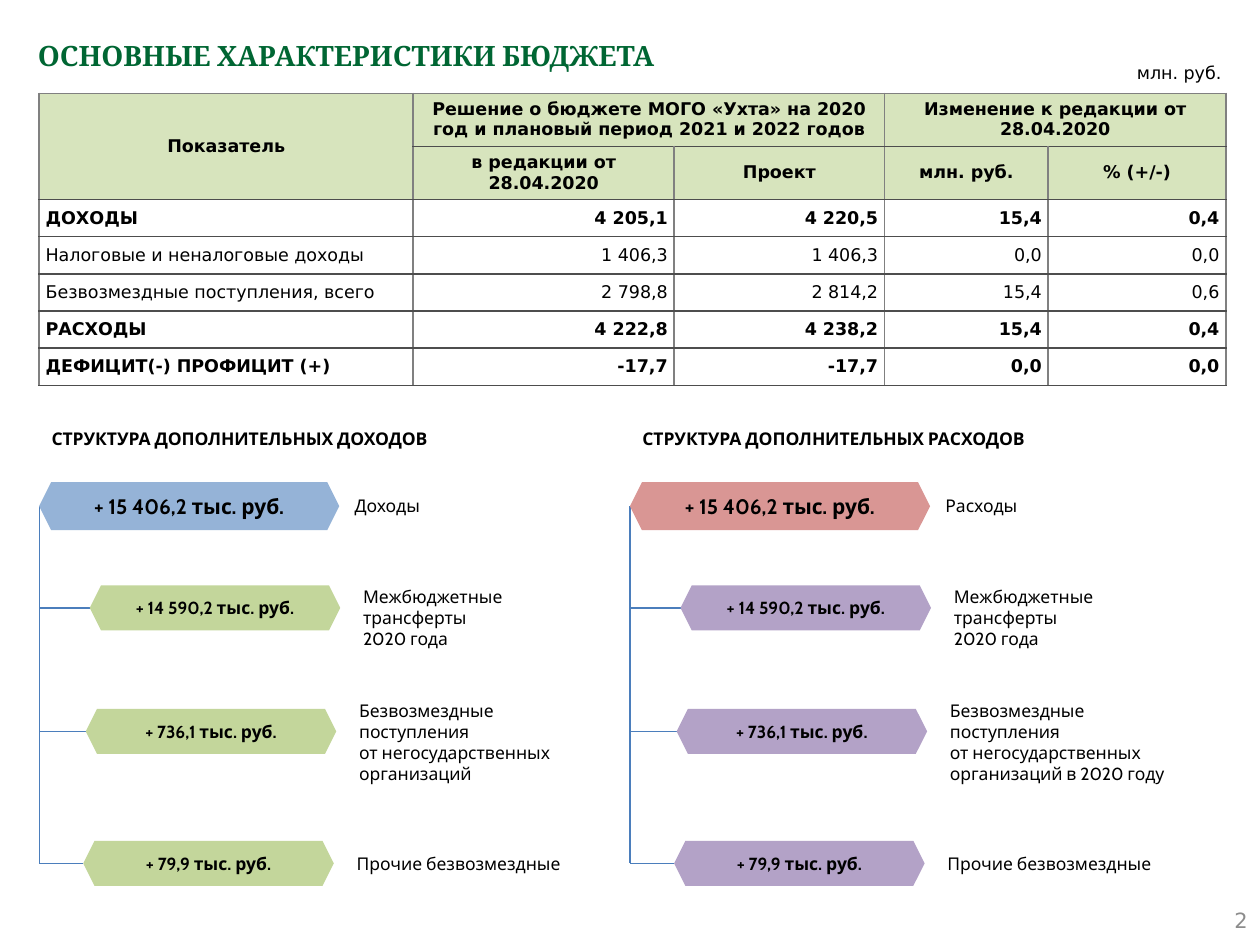
from dataclasses import dataclass

from lxml.etree import SubElement
from pptx import Presentation
from pptx.dml.color import RGBColor
from pptx.enum.shapes import MSO_CONNECTOR, MSO_SHAPE
from pptx.enum.text import MSO_ANCHOR, PP_ALIGN
from pptx.oxml import parse_xml
from pptx.oxml.ns import nsdecls, qn
from pptx.util import Cm, Pt

TITLE = "ОСНОВНЫЕ ХАРАКТЕРИСТИКИ БЮДЖЕТА"
UNITS = "млн. руб."
PAGE = "2"

HEADER = [
    ["Показатель", "Решение о бюджете МОГО «Ухта» на 2020 год и плановый период 2021 и 2022 годов",
     "", "Изменение к редакции от 28.04.2020", ""],
    ["", "в редакции от 28.04.2020", "Проект", "млн. руб.", "% (+/-)"],
]
MERGES = [((0, 0), (1, 0)), ((0, 1), (0, 2)), ((0, 3), (0, 4))]
BODY = [
    ["ДОХОДЫ", "4 205,1", "4 220,5", "15,4", "0,4"],
    ["Налоговые и неналоговые доходы", "1 406,3", "1 406,3", "0,0", "0,0"],
    ["Безвозмездные поступления, всего", "2 798,8", "2 814,2", "15,4", "0,6"],
    ["РАСХОДЫ", "4 222,8", "4 238,2", "15,4", "0,4"],
    ["ДЕФИЦИТ(-) ПРОФИЦИТ (+)", "-17,7", "-17,7", "0,0", "0,0"],
]
BOLD_ROWS = {"ДОХОДЫ", "РАСХОДЫ", "ДЕФИЦИТ(-) ПРОФИЦИТ (+)"}
COL_WIDTHS = [7.54, 5.26, 4.24, 3.3, 3.58]
HEADER_HEIGHT, BODY_HEIGHT = 1.07, 0.75

TRANSFERS = ["Межбюджетные трансферты", "2020 года"]
DONATIONS = ["Безвозмездные поступления", "от негосударственных"]
AMOUNTS = ["+ 14 590,2 тыс. руб.", "+ 736,1 тыс. руб.", "+ 79,9 тыс. руб."]
TOTAL = "+ 15 406,2 тыс. руб."
TREES = [
    dict(x=0.79, heading="СТРУКТУРА ДОПОЛНИТЕЛЬНЫХ ДОХОДОВ", total="Доходы",
         root="95B3D7", leaf="C3D69B",
         labels=[TRANSFERS, DONATIONS + ["организаций"], ["Прочие безвозмездные"]]),
    dict(x=12.7, heading="СТРУКТУРА ДОПОЛНИТЕЛЬНЫХ РАСХОДОВ", total="Расходы",
         root="D99694", leaf="B3A2C7",
         labels=[TRANSFERS, DONATIONS + ["организаций в 2020 году"], ["Прочие безвозмездные"]]),
]
# Indent from the trunk, top of the hexagon, top of the label (cm)
BRANCHES = [(1.02, 11.8, 11.68), (0.94, 14.29, 13.98), (0.89, 16.95, 17.08)]
ROOT_TOP, ROOT_SIZE, LEAF_SIZE = 9.72, (6.05, 0.97), (5.05, 0.91)
LABEL_GAP = 0.21


@dataclass(frozen=True)
class Theme:
    title_font: str = "Cambria"
    table_font: str = "DejaVu Sans"
    tree_font: str = "Cabin"
    title: str = "006633"
    text: str = "000000"
    page: str = "8C8C8C"
    header: str = "D7E4BD"
    grid: str = "808080"
    rule: str = "4D4D4D"
    line: str = "4B7EBC"
    title_size: int = 16
    large: int = 12
    normal: int = 10


T = Theme()


def rgb(value):
    return RGBColor.from_string(value)


def write(tf, lines, font, size=T.normal, color=T.text, bold=False, align=PP_ALIGN.LEFT):
    for i, line in enumerate(lines):
        p = tf.paragraphs[0] if i == 0 else tf.add_paragraph()
        p.alignment = align
        r = p.add_run()
        r.text = line
        r.font.name, r.font.size, r.font.bold = font, Pt(size), bold
        r.font.color.rgb = rgb(color)


def add_text(s, box, lines, font, anchor=MSO_ANCHOR.TOP, wrap=True, **style):
    tf = s.shapes.add_textbox(*map(Cm, box)).text_frame
    tf.word_wrap, tf.vertical_anchor = wrap, anchor
    write(tf, lines, font, **style)


def add_hexagon(s, x, y, size, fill, text, text_size):
    sp = s.shapes.add_shape(MSO_SHAPE.HEXAGON, Cm(x), Cm(y), *map(Cm, size))
    sp.shadow.inherit = False
    sp.fill.solid()
    sp.fill.fore_color.rgb = rgb(fill)
    sp.line.fill.background()
    tf = sp.text_frame
    tf.word_wrap, tf.vertical_anchor = False, MSO_ANCHOR.MIDDLE
    write(tf, [text], T.tree_font, size=text_size, bold=True, align=PP_ALIGN.CENTER)


def add_line(s, *ends):
    line = s.shapes.add_connector(MSO_CONNECTOR.STRAIGHT, *map(Cm, ends))
    line.line.color.rgb = rgb(T.line)
    line.line.width = Pt(0.75)
    SubElement(line._element.spPr, qn("a:effectLst"))


def set_borders(cell, horizontal):
    """Border lines must come before the fill in the cell properties."""
    colors = dict(lnL=T.grid, lnR=T.grid, lnT=horizontal, lnB=horizontal)
    for i, (tag, color) in enumerate(colors.items()):
        cell._tc.get_or_add_tcPr().insert(i, parse_xml(
            f'<a:{tag} {nsdecls("a")} w="12700"><a:solidFill>'
            f'<a:srgbClr val="{color}"/></a:solidFill></a:{tag}>'))


def add_budget_table(s):
    rows = HEADER + BODY
    heights = [HEADER_HEIGHT] * len(HEADER) + [BODY_HEIGHT] * len(BODY)
    table = s.shapes.add_table(len(rows), len(COL_WIDTHS), Cm(0.79), Cm(1.88),
                               Cm(sum(COL_WIDTHS)), Cm(sum(heights))).table
    table.first_row = table.horz_banding = False
    for col, width in zip(table.columns, COL_WIDTHS):
        col.width = Cm(width)
    for row, height in zip(table.rows, heights):
        row.height = Cm(height)
    for i, row in enumerate(rows):
        is_header = i < len(HEADER)
        for j, text in enumerate(row):
            cell = table.cell(i, j)
            cell.vertical_anchor = MSO_ANCHOR.MIDDLE
            cell.margin_left = cell.margin_right = Cm(0.13)
            cell.margin_top = cell.margin_bottom = Cm(0.13 if not is_header else 0.1)
            if is_header:
                cell.fill.solid()
                cell.fill.fore_color.rgb = rgb(T.header)
                align = PP_ALIGN.CENTER
            else:
                cell.fill.background()
                align = PP_ALIGN.RIGHT if j else PP_ALIGN.LEFT
            set_borders(cell, T.grid if i == 0 else T.rule)
            if text:
                write(cell.text_frame, [text], T.table_font, align=align,
                      bold=is_header or row[0] in BOLD_ROWS)
    for first, last in MERGES:
        table.cell(*first).merge(table.cell(*last))


def add_tree(s, x, heading, total, root, leaf, labels):
    add_text(s, (x, 8.51, 8.5, 0.68), [heading], T.tree_font, wrap=False, bold=True)
    middles = [top + LEAF_SIZE[1] / 2 for _, top, _ in BRANCHES]
    add_line(s, x, ROOT_TOP + ROOT_SIZE[1] / 2, x, middles[-1])
    add_hexagon(s, x, ROOT_TOP, ROOT_SIZE, root, TOTAL, T.large)
    add_text(s, (x + ROOT_SIZE[0] + 0.06, 9.86, 5.28, 0.68), [total], T.tree_font)
    for (indent, top, label_top), middle, amount, label in zip(BRANCHES, middles, AMOUNTS, labels):
        left = x + indent
        add_line(s, x, middle, left, middle)
        add_hexagon(s, left, top, LEAF_SIZE, leaf, amount, T.normal)
        add_text(s, (left + LEAF_SIZE[0] + LABEL_GAP, label_top, 5.21, 0.43 * len(label) + 0.25),
                 label, T.tree_font)


def main():
    prs = Presentation()
    prs.slide_width, prs.slide_height = Cm(25.4), Cm(19.05)
    s = prs.slides.add_slide(prs.slide_layouts[5])

    title = s.shapes.title
    title.left, title.top, title.width, title.height = map(Cm, (0.51, 0.51, 24.41, 2))
    tf = title.text_frame
    tf.vertical_anchor = MSO_ANCHOR.TOP
    write(tf, [TITLE], T.title_font, size=T.title_size, color=T.title, bold=True)
    tf.paragraphs[0].line_spacing = 1.2

    add_text(s, (19.48, 18.03, 5.92, 1.02), [PAGE], T.table_font, MSO_ANCHOR.MIDDLE,
             size=T.large, color=T.page, align=PP_ALIGN.RIGHT)
    add_budget_table(s)
    add_text(s, (21.72, 1.19, 3.15, 0.53), [UNITS], T.table_font, MSO_ANCHOR.MIDDLE,
             align=PP_ALIGN.RIGHT)
    for tree in TREES:
        add_tree(s, **tree)
    prs.save("out.pptx")


if __name__ == "__main__":
    main()
